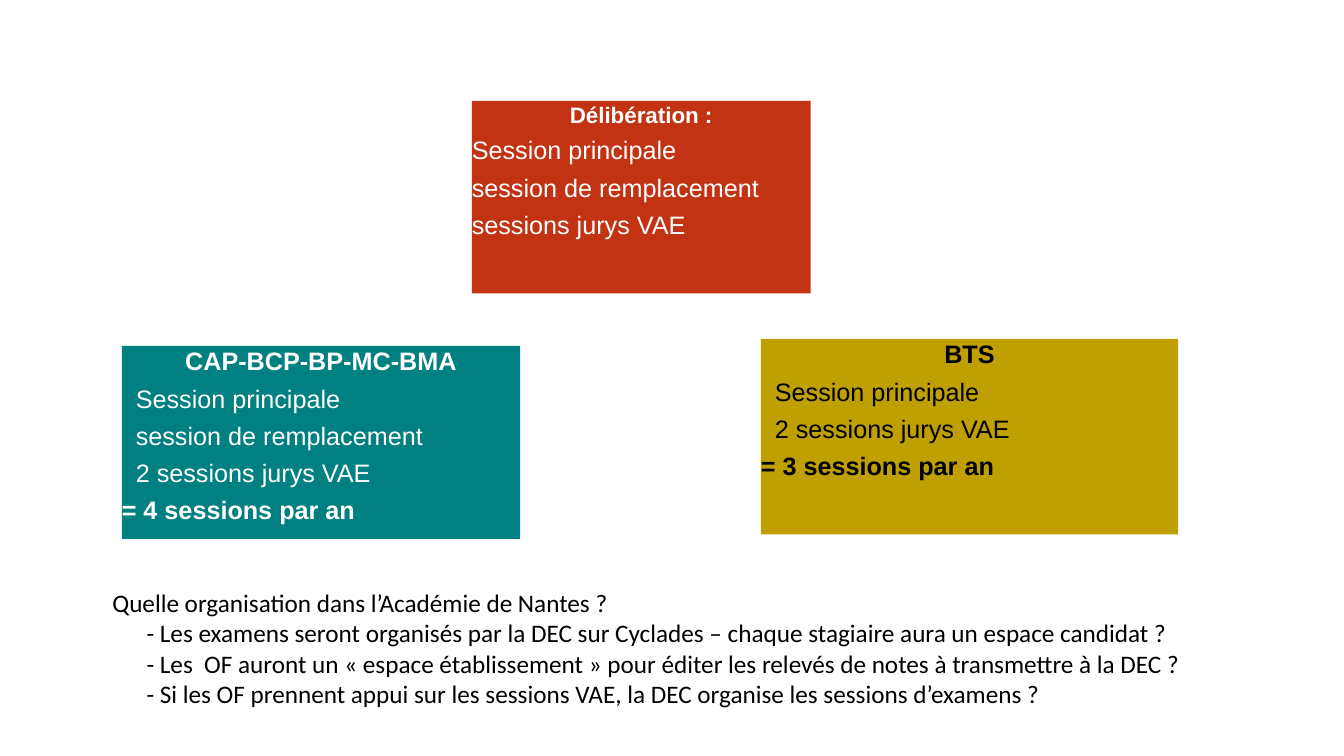
"""Build the slide on deliberation sessions and exam organisation."""
import pptx
import pptx.dml.color
import pptx.enum.shapes
import pptx.enum.text
import pptx.util

Pt = pptx.util.Pt
ALIGN = pptx.enum.text.PP_ALIGN
COLORS = {"red": "C23314", "gold": "BFA000", "teal": "008080",
          "white": "FFFFFF", "black": "000000"}


def rgb(name):
    return pptx.dml.color.RGBColor.from_string(COLORS[name])


def add_text(tf, text, first=False, size=18, font="Arial", color="black",
             bold=False, align=ALIGN.LEFT, indent=0, after=0):
    p = tf.paragraphs[0] if first else tf.add_paragraph()
    p.alignment = align
    p.space_after = Pt(after)
    p._p.get_or_add_pPr().set("marL", str(Pt(indent)))
    r = p.add_run()
    r.text = text
    r.font.size = Pt(size)
    r.font.name = font
    r.font.bold = bold
    r.font.color.rgb = rgb(color)


def add_session_box(s, box, fill, color, title, sessions, total=None,
                    title_size=18, indent=10):
    sp = s.shapes.add_shape(pptx.enum.shapes.MSO_SHAPE.RECTANGLE,
                            *[Pt(v) for v in box])
    sp.shadow.inherit = False
    sp.fill.solid()
    sp.fill.fore_color.rgb = rgb(fill)
    sp.line.fill.background()
    tf = sp.text_frame
    tf.word_wrap = True
    tf.vertical_anchor = pptx.enum.text.MSO_ANCHOR.TOP
    tf.margin_left = tf.margin_top = tf.margin_right = tf.margin_bottom = 0
    add_text(tf, title, first=True, size=title_size, color=color, bold=True,
             align=ALIGN.CENTER, after=5)
    for session in sessions:
        add_text(tf, session, color=color, indent=indent, after=5)
    if total:
        add_text(tf, total, color=color, bold=True, after=5)


def add_questions(s, box, heading, items):
    tf = s.shapes.add_textbox(*[Pt(v) for v in box]).text_frame
    tf.word_wrap = True
    add_text(tf, heading, first=True, font="Calibri")
    for item in items:
        add_text(tf, "- " + item, font="Calibri", indent=24.4)


def main():
    prs = pptx.Presentation()
    prs.slide_width, prs.slide_height = Pt(960), Pt(540)
    s = prs.slides.add_slide(prs.slide_layouts[6])
    add_session_box(
        s, (337, 72, 242, 137.5), "red", "white", "Délibération :",
        ["Session principale", "session de remplacement", "sessions jurys VAE"],
        title_size=16, indent=0)
    add_session_box(
        s, (543.5, 242, 298, 139.7), "gold", "black", "BTS",
        ["Session principale", "2 sessions jurys VAE"], "= 3 sessions par an")
    add_session_box(
        s, (87, 247, 284.5, 138), "teal", "white", "CAP-BCP-BP-MC-BMA",
        ["Session principale", "session de remplacement",
         "2 sessions jurys VAE"], "= 4 sessions par an")
    add_questions(
        s, (73.2, 416, 803, 116.5),
        "Quelle organisation dans l’Académie de Nantes ?",
        ["Les examens seront organisés par la DEC sur Cyclades – "
         "chaque stagiaire aura un espace candidat ?",
         "Les  OF auront un « espace établissement » pour éditer "
         "les relevés de notes à transmettre à la DEC ?",
         "Si les OF prennent appui sur les sessions VAE, "
         "la DEC organise les sessions d’examens ?"])
    prs.save("out.pptx")


if __name__ == "__main__":
    main()
